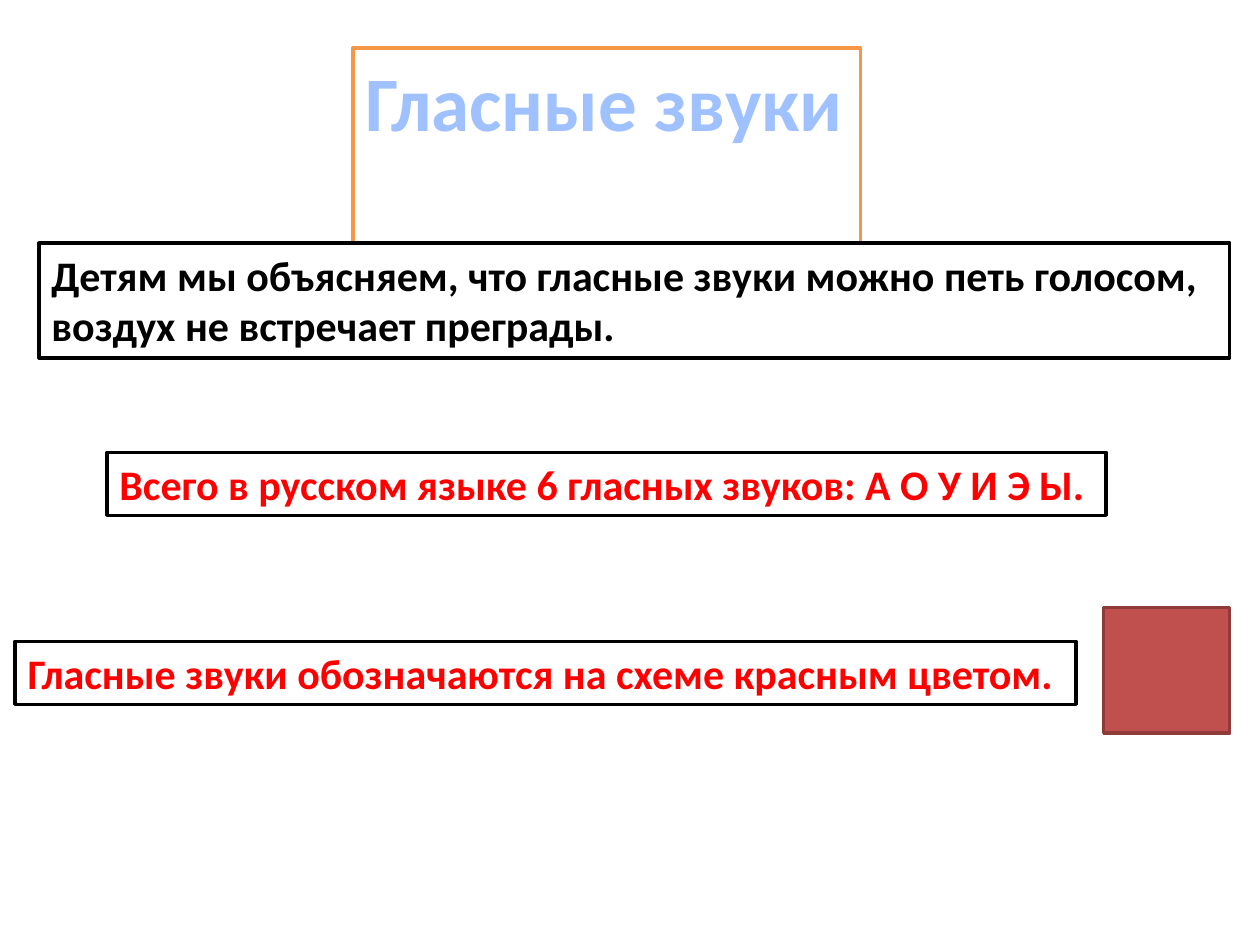
from dataclasses import dataclass

from lxml.etree import SubElement
from pptx import Presentation
from pptx.dml.color import RGBColor
from pptx.enum.shapes import MSO_SHAPE
from pptx.enum.text import MSO_ANCHOR, MSO_AUTO_SIZE, PP_ALIGN
from pptx.oxml.ns import qn
from pptx.util import Inches, Pt

WIDTH, HEIGHT = 10, 7.5
FONT = "Calibri"
COLORS = {
    "paper": "FFFFFF",
    "ink": "000000",
    "vowel": "FF0000",
    "title_frame": "F79646",
    "title_outline": "467AB8",
    "square": "C0504D",
    "square_frame": "8E3B39",
}
# Position in percent and colour of each stop in the title gradient
TITLE_GRADIENT = [(0, "BFD3F9"), (9, "A0C1FF"), (50, "003D85"), (79, "A0C1FF"), (100, "BFD3F9")]


@dataclass
class Box:
    """A frame whose lengths are in inches on the slide."""
    left: float
    top: float
    width: float
    height: float

    def lengths(self) -> list:
        return [Inches(value) for value in (self.left, self.top, self.width, self.height)]


@dataclass
class Statement:
    box: Box
    lines: list[str]
    color: str


TITLE_BOX = Box(2.8, 0.38, 4.03, 0.84)
SQUARE_BOX = Box(8.76, 4.82, 1, 1)
STATEMENTS = [
    Statement(Box(0.31, 1.93, 9.45, 0.91),
              ["Детям мы объясняем, что гласные звуки можно петь голосом,",
               "воздух не встречает преграды."], "ink"),
    Statement(Box(0.85, 3.59, 7.93, 0.5),
              ["Всего в русском языке 6 гласных звуков: А О У И Э Ы."], "vowel"),
    Statement(Box(0.12, 5.09, 8.42, 0.5),
              ["Гласные звуки обозначаются на схеме красным цветом."], "vowel"),
]


def paint(shape, fill: str, line: str) -> None:
    shape.fill.solid()
    shape.fill.fore_color.rgb = RGBColor.from_string(COLORS[fill])
    shape.line.color.rgb = RGBColor.from_string(COLORS[line])
    shape.line.width = Pt(2)


def write(shape, lines: list[str], *, size: float, color: str) -> None:
    frame = shape.text_frame
    frame.text = "\n".join(lines)
    frame.word_wrap = False
    frame.auto_size = MSO_AUTO_SIZE.SHAPE_TO_FIT_TEXT
    frame.vertical_anchor = MSO_ANCHOR.TOP
    for paragraph in frame.paragraphs:
        paragraph.alignment = PP_ALIGN.LEFT
        font = paragraph.runs[0].font
        font.name, font.size, font.bold = FONT, Pt(size), True
        font.color.rgb = RGBColor.from_string(COLORS[color])


def add_color(parent, color: str) -> None:
    SubElement(parent, qn("a:srgbClr"), val=color)


def decorate_title(font) -> None:
    """Give the letters a vertical gradient and a thin outline."""
    font.fill.gradient()
    gradient = font._element.find(qn("a:gradFill"))
    for child in list(gradient):
        gradient.remove(child)
    stops = SubElement(gradient, qn("a:gsLst"))
    for percent, color in TITLE_GRADIENT:
        add_color(SubElement(stops, qn("a:gs"), pos=str(percent * 1000)), color)
    SubElement(gradient, qn("a:lin"), ang=str(90 * 60000), scaled="0")

    outline = SubElement(font._element, qn("a:ln"), w=str(Pt(0.83)))
    add_color(SubElement(outline, qn("a:solidFill")), COLORS["title_outline"])
    font._element.insert(0, outline)


def add_title(slide) -> None:
    title = slide.shapes.title
    title.left, title.top, title.width, title.height = TITLE_BOX.lengths()
    paint(title, "paper", "title_frame")
    write(title, ["Гласные звуки"], size=44, color="title_outline")
    decorate_title(title.text_frame.paragraphs[0].runs[0].font)


def add_statement(slide, statement: Statement) -> None:
    shape = slide.shapes.add_textbox(*statement.box.lengths())
    paint(shape, "paper", "ink")
    write(shape, statement.lines, size=24, color=statement.color)


def add_square(slide) -> None:
    square = slide.shapes.add_shape(MSO_SHAPE.RECTANGLE, *SQUARE_BOX.lengths())
    square.shadow.inherit = False
    paint(square, "square", "square_frame")


def main() -> None:
    presentation = Presentation()
    presentation.slide_width, presentation.slide_height = Inches(WIDTH), Inches(HEIGHT)
    title_only = presentation.slide_layouts[5]
    slide = presentation.slides.add_slide(title_only)

    # Heading, statements, then the square that marks a vowel
    add_title(slide)
    for statement in STATEMENTS:
        add_statement(slide, statement)
    add_square(slide)
    presentation.save("out.pptx")


if __name__ == "__main__":
    main()
